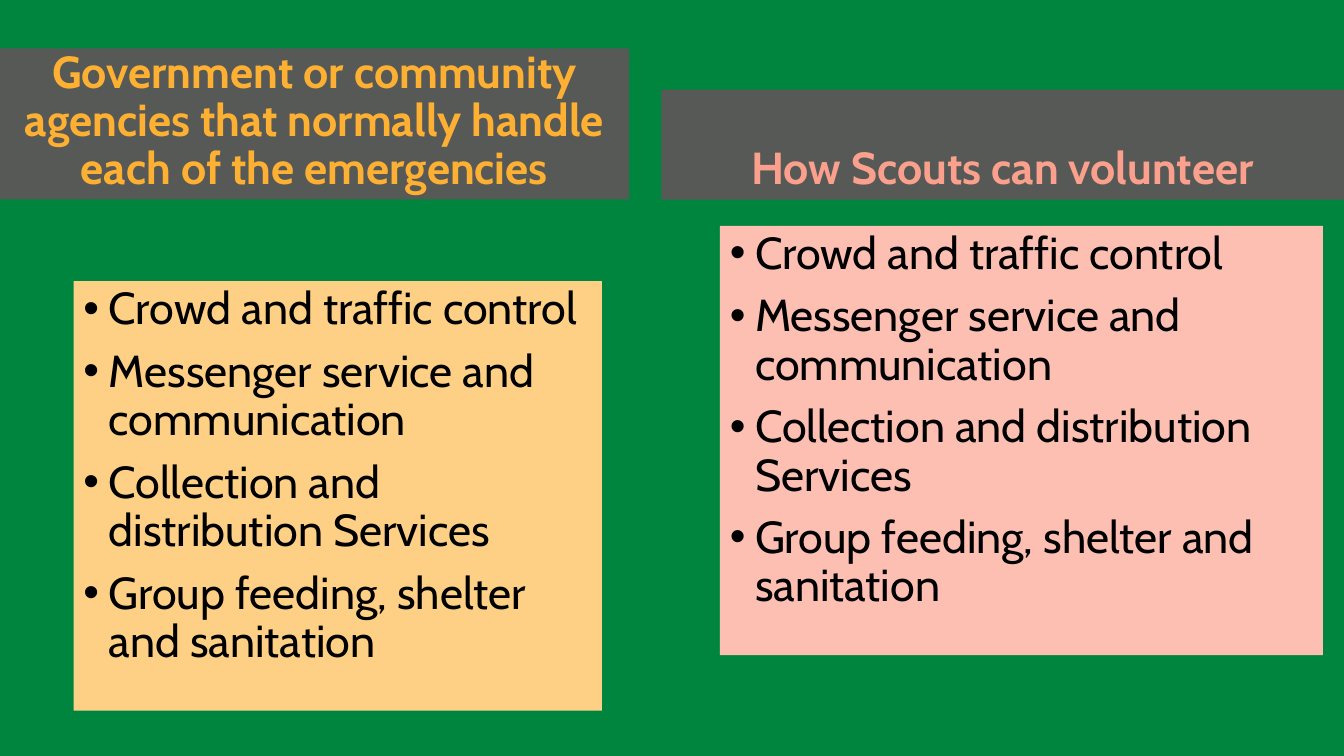
from lxml import etree
from pptx import Presentation
from pptx.dml.color import RGBColor
from pptx.enum.shapes import MSO_SHAPE
from pptx.enum.text import MSO_ANCHOR, PP_ALIGN
from pptx.oxml.ns import qn
from pptx.util import Inches, Pt

FONT = "Cabin"
GREEN, GRAY, BLACK = "00853E", "575957", "000000"
SERVICES = [
    "Crowd and traffic control",
    "Messenger service and communication",
    "Collection and distribution Services",
    "Group feeding, shelter and sanitation",
]


def set_fill(fill, color):
    fill.solid()
    fill.fore_color.rgb = RGBColor.from_string(color)


def add_panel(slide, box, color, anchor):
    """Add a plain filled rectangle and return its text frame."""
    shape = slide.shapes.add_shape(MSO_SHAPE.RECTANGLE, *map(Inches, box))
    shape.shadow.inherit = False
    set_fill(shape.fill, color)
    shape.line.fill.background()
    text_frame = shape.text_frame
    text_frame.word_wrap = True
    text_frame.vertical_anchor = anchor
    return text_frame


def style_paragraph(paragraph, color, alignment, bold=False):
    paragraph.alignment = alignment
    paragraph.line_spacing = 0.9
    paragraph.font.name = FONT
    paragraph.font.size = Pt(32)
    paragraph.font.bold = bold
    paragraph.font.color.rgb = RGBColor.from_string(color)


def add_bullet(paragraph):
    properties = paragraph._p.get_or_add_pPr()
    properties.set("marL", str(Inches(0.25)))
    properties.set("indent", str(-Inches(0.25)))
    etree.SubElement(properties, qn("a:buFont")).set("typeface", "Arial")
    etree.SubElement(properties, qn("a:buChar")).set("char", "•")


def add_heading(slide, box, text, color):
    text_frame = add_panel(slide, box, GRAY, MSO_ANCHOR.BOTTOM)
    paragraph = text_frame.paragraphs[0]
    paragraph.text = text
    style_paragraph(paragraph, color, PP_ALIGN.CENTER, bold=True)


def add_bullet_list(slide, box, items, color):
    text_frame = add_panel(slide, box, color, MSO_ANCHOR.TOP)
    for index, item in enumerate(items):
        paragraph = text_frame.add_paragraph() if index else text_frame.paragraphs[0]
        paragraph.text = item
        add_bullet(paragraph)
        style_paragraph(paragraph, BLACK, PP_ALIGN.LEFT)
        if index:
            paragraph.space_before = Pt(10)


def main():
    presentation = Presentation()
    presentation.slide_width = Inches(13.33)
    presentation.slide_height = Inches(7.5)
    slide = presentation.slides.add_slide(presentation.slide_layouts[6])
    set_fill(slide.background.fill, GREEN)

    # Left column: agencies
    add_heading(
        slide, (0, 0.48, 6.24, 1.5),
        "Government or community agencies that normally handle each of the emergencies",
        "FEB033",
    )
    add_bullet_list(slide, (0.73, 2.79, 5.24, 4.26), SERVICES, "FED085")

    # Right column: volunteering
    add_heading(slide, (6.56, 0.89, 6.77, 1.09), "How Scouts can volunteer", "FBA08C")
    add_bullet_list(slide, (7.14, 2.24, 5.98, 4.26), SERVICES, "FCBFB2")

    presentation.save("out.pptx")


if __name__ == "__main__":
    main()
